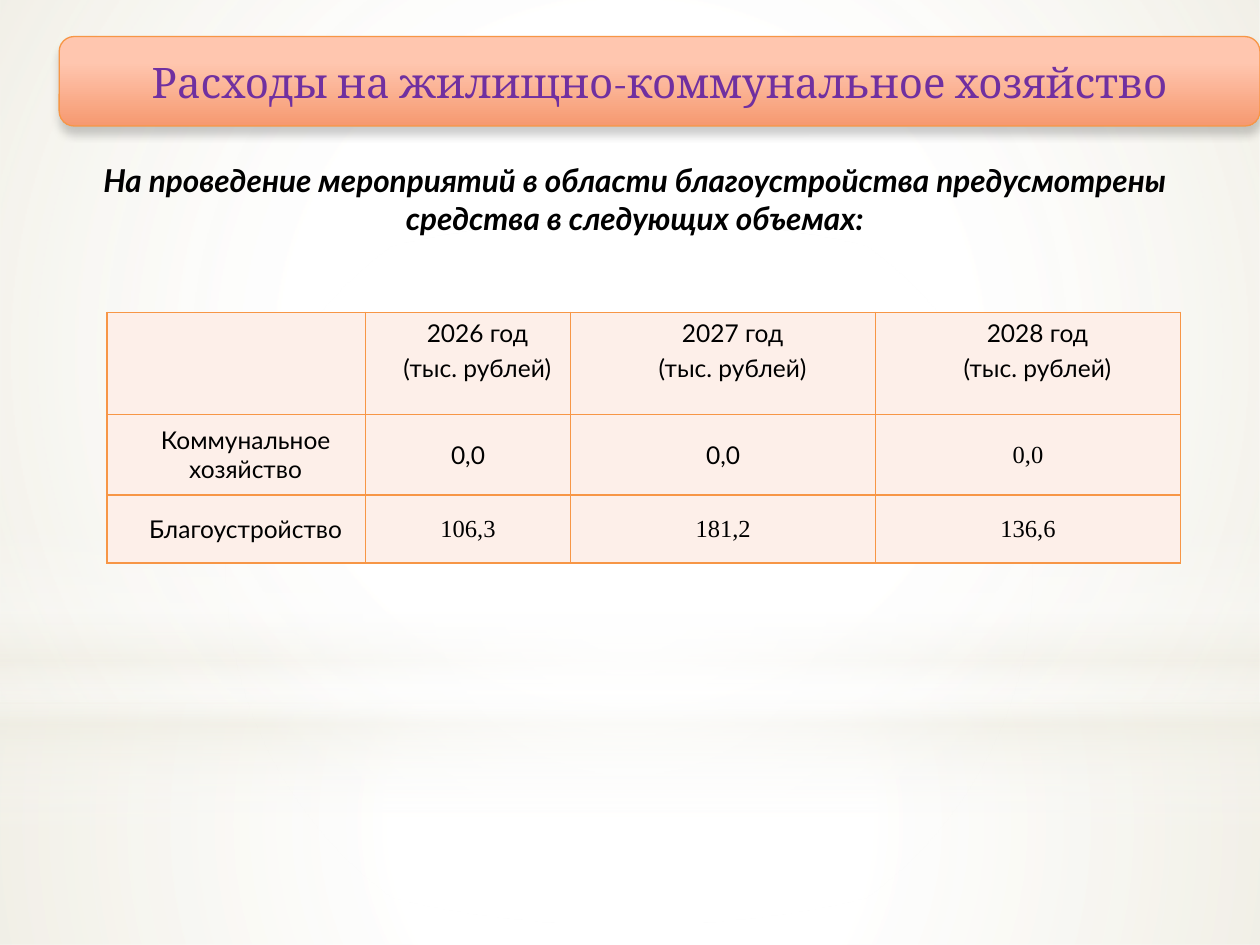
from lxml.etree import SubElement
from pptx import Presentation
from pptx.dml.color import RGBColor
from pptx.enum.shapes import MSO_SHAPE
from pptx.enum.text import MSO_ANCHOR, PP_ALIGN
from pptx.oxml import parse_xml
from pptx.oxml.ns import nsdecls, qn
from pptx.util import Inches, Pt

ORANGE, CELL_FILL, PURPLE, BLACK = "F79646", "FDEFE9", "7030A0", "000000"
WHITE, SAND = "FFFFFF", "EEECE1"
BODY_FONT, TITLE_FONT, NUMBER_FONT = "Lato", "Cambria", "Times New Roman"


def color(value):
    return RGBColor.from_string(value)


def gradient(stops, circular):
    marks = "".join(
        f'<a:gs pos="{place * 1000}"><a:srgbClr val="{value}">'
        f'<a:alpha val="{alpha * 1000}"/></a:srgbClr></a:gs>'
        for place, value, alpha in stops
    )
    if circular:
        direction = ('<a:path path="circle"><a:fillToRect l="50000" t="50000" '
                     'r="50000" b="50000"/></a:path>')
    else:
        direction = '<a:lin ang="5400000" scaled="0"/>'
    return parse_xml(f'<a:gradFill {nsdecls("a")} rotWithShape="1">'
                     f'<a:gsLst>{marks}</a:gsLst>{direction}</a:gradFill>')


class SlideBuilder:
    """Holds the style and the current slide, and adds each kind of element."""

    def __init__(self, deck):
        self.slide = deck.slides.add_slide(deck.slide_layouts[5])

    def shape(self, kind, area, stops, circular=False, outline=None):
        shape = self.slide.shapes.add_shape(kind, *map(Inches, area))
        shape.shadow.inherit = False
        if outline:
            shape.line.color.rgb = color(outline)
            shape.line.width = Pt(0.75)
        else:
            shape.line.fill.background()
        shape._element.spPr.insert(2, gradient(stops, circular))
        return shape

    def drop_shadow(self, shape):
        effects = shape._element.spPr.find(qn("a:effectLst"))
        effects.append(parse_xml(
            f'<a:outerShdw {nsdecls("a")} blurRad="{Pt(5)}" dist="{Pt(4)}" dir="5400000" '
            'rotWithShape="0"><a:srgbClr val="000000"><a:alpha val="20000"/></a:srgbClr>'
            '</a:outerShdw>'))

    def format_text(self, frame, font, size, value=BLACK, bold=False, italic=False):
        for para in frame.paragraphs:
            para.alignment = PP_ALIGN.CENTER
            for span in para.runs:
                span.font.name = font
                span.font.size = Pt(size)
                span.font.bold = bold
                span.font.italic = italic
                span.font.color.rgb = color(value)

    def title(self, text, area):
        title = self.slide.shapes.title
        title.left, title.top, title.width, title.height = map(Inches, area)
        frame = title.text_frame
        frame.text = text
        frame.word_wrap = True
        frame.vertical_anchor = MSO_ANCHOR.MIDDLE
        self.format_text(frame, TITLE_FONT, 24, PURPLE)
        self.slide.shapes._spTree.append(title._element)

    def text(self, text, area):
        frame = self.slide.shapes.add_textbox(*map(Inches, area)).text_frame
        frame.word_wrap = True
        frame.text = text
        self.format_text(frame, BODY_FONT, 18, bold=True, italic=True)

    def border(self, cell):
        properties = cell._tc.get_or_add_tcPr()
        for index, side in enumerate(("lnL", "lnR", "lnT", "lnB")):
            line = SubElement(properties, qn(f"a:{side}"), w=str(Pt(1)))
            fill = SubElement(line, qn("a:solidFill"))
            SubElement(fill, qn("a:srgbClr"), val=ORANGE)
            properties.insert(index, line)

    def cell(self, cell, text, font, is_label, anchor):
        cell.fill.solid()
        cell.fill.fore_color.rgb = color(CELL_FILL)
        self.border(cell)
        cell.vertical_anchor = anchor
        cell.margin_left = cell.margin_right = Inches(0.1 if is_label else 0.07)
        cell.margin_top = cell.margin_bottom = Inches(0.05 if is_label else 0)
        cell.text_frame.text = text
        for index, para in enumerate(cell.text_frame.paragraphs):
            if is_label:
                para._p.get_or_add_pPr().set("marL", str(Inches(0.15)))
            if index:
                para.space_before = Pt(3)
        self.format_text(cell.text_frame, font, 14)

    def table(self, rows, area, widths, heights, number_fonts):
        table = self.slide.shapes.add_table(len(rows), len(widths), *map(Inches, area)).table
        table.first_row = table.horz_banding = False
        for column, width in zip(table.columns, widths):
            column.width = Inches(width)
        for row, height in zip(table.rows, heights):
            row.height = Inches(height)
        for r, values in enumerate(rows):
            for c, value in enumerate(values):
                is_label = r == 0 or c == 0
                font = BODY_FONT if is_label else number_fonts[r - 1][c - 1]
                anchor = MSO_ANCHOR.MIDDLE if r else MSO_ANCHOR.TOP
                self.cell(table.cell(r, c), value, font, is_label, anchor)


def main():
    deck = Presentation()
    deck.slide_width, deck.slide_height = Inches(10), Inches(7.5)
    page = SlideBuilder(deck)

    page.shape(MSO_SHAPE.RECTANGLE, (0, 5.58, 10, 1.92),
               [(0, WHITE, 91), (37, WHITE, 76), (100, SAND, 79)], circular=True)
    page.shape(MSO_SHAPE.RECTANGLE, (0, 0, 10, 5.58),
               [(0, WHITE, 89), (48, WHITE, 62), (100, SAND, 79)], circular=True)
    page.shape(MSO_SHAPE.RECTANGLE, (0, 4.12, 10, 2.5),
               [(0, WHITE, 0), (29, WHITE, 30), (45, SAND, 40),
                (55, WHITE, 26), (65, SAND, 60), (100, WHITE, 0)])
    page.shape(MSO_SHAPE.OVAL, (0, 1.75, 10, 5.58),
               [(0, WHITE, 100), (56, WHITE, 0)], circular=True)

    banner_area = (0.47, 0.29, 9.53, 0.71)
    banner = page.shape(MSO_SHAPE.ROUNDED_RECTANGLE, banner_area,
                        [(28, "FFC6AF", 100), (100, "F69970", 100)], outline=ORANGE)
    page.drop_shadow(banner)
    page.title("Расходы на жилищно-коммунальное хозяйство", banner_area)
    page.text("На проведение мероприятий в области благоустройства предусмотрены "
              "средства в следующих объемах:", (0.59, 1.23, 8.9, 1.01))

    years = [f"{year} год\n(тыс. рублей)" for year in (2026, 2027, 2028)]
    page.table(
        [["", *years],
         ["Коммунальное хозяйство", "0,0", "0,0", "0,0"],
         ["Благоустройство", "106,3", "181,2", "136,6"]],
        (0.85, 2.48, 8.53, 1.99), (2.05, 1.63, 2.42, 2.42), (0.81, 0.64, 0.54),
        [[BODY_FONT, BODY_FONT, NUMBER_FONT], [NUMBER_FONT] * 3])

    deck.save("out.pptx")


if __name__ == "__main__":
    main()
